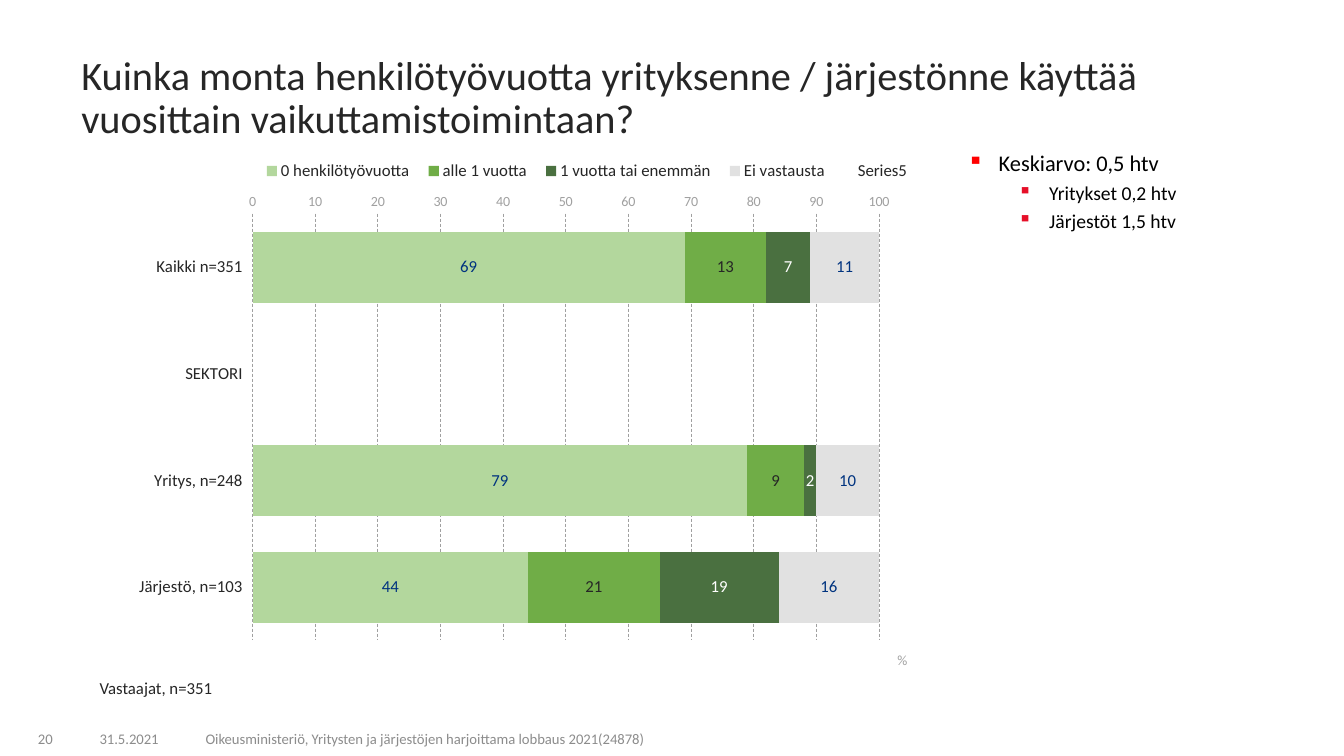
from lxml import etree
from pptx import Presentation
from pptx.chart.data import CategoryChartData
from pptx.dml.color import RGBColor
from pptx.enum.chart import (XL_AXIS_CROSSES, XL_CHART_TYPE, XL_LEGEND_POSITION,
                             XL_TICK_LABEL_POSITION, XL_TICK_MARK)
from pptx.enum.dml import MSO_LINE
from pptx.enum.text import MSO_ANCHOR, PP_ALIGN
from pptx.oxml.ns import qn
from pptx.util import Cm, Pt

LEFT, CENTER, RIGHT = PP_ALIGN.LEFT, PP_ALIGN.CENTER, PP_ALIGN.RIGHT
TOP, MIDDLE, BOTTOM = MSO_ANCHOR.TOP, MSO_ANCHOR.MIDDLE, MSO_ANCHOR.BOTTOM
NO_TICK = XL_TICK_MARK.NONE
FONT = "Calibri"
COLORS = {
    "ink": "262626", "black": "000000", "white": "FFFFFF", "navy": "00337F",
    "footer": "8C8C8C", "axis": "A0A0A0", "red": "FF0000", "crimson": "E60F28",
    "light green": "B3D79D", "green": "70AD47", "dark green": "4A7040", "grey": "E1E1E1",
}

# Content
TITLE = ("Kuinka monta henkilötyövuotta yrityksenne / järjestönne käyttää "
         "vuosittain vaikuttamistoimintaan?")
RESPONDENTS = "Vastaajat, n=351"
# text, left, width, alignment
FOOTERS = [
    ("20", 0.08, 1.5, RIGHT),
    ("31.5.2021", 1.68, 3.15, CENTER),
    ("Oikeusministeriö, Yritysten ja järjestöjen harjoittama lobbaus 2021(24878)",
     4.93, 15.04, LEFT),
]
# text, size, indent, space before, bullet colour
AVERAGES = [
    ("Keskiarvo: 0,5 htv", 16, 0.79, 0, "red"),
    ("Yritykset 0,2 htv", 14, 2.06, 5, "crimson"),
    ("Järjestöt 1,5 htv", 14, 2.06, 5, "crimson"),
]
GROUPS = ["Kaikki n=351", "SEKTORI", "Yritys, n=248", "Järjestö, n=103"]
# name, values, fill, label colour
ANSWERS = [
    ("0 henkilötyövuotta", [69, None, 79, 44], "light green", "navy"),
    ("alle 1 vuotta", [13, None, 9, 21], "green", "ink"),
    ("1 vuotta tai enemmän", [7, None, 2, 19], "dark green", "white"),
    ("Ei vastausta", [11, None, 10, 16], "grey", "navy"),
    ("Series5", [None] * 4, None, None),
]


def rgb(name):
    return RGBColor.from_string(COLORS[name])


def style(font, size, color):
    font.name, font.size, font.bold = FONT, Pt(size), False
    font.color.rgb = rgb(color)


def write(para, text, *, size=12, color="ink", align=LEFT, spacing=None, before=0):
    para.alignment = align
    para.line_spacing = spacing
    para.space_before = Pt(before)
    span = para.add_run()
    span.text = text
    style(span.font, size, color)


def add_box(page, left, top, width, height, anchor=TOP):
    frame = page.shapes.add_textbox(Cm(left), Cm(top), Cm(width), Cm(height)).text_frame
    frame.word_wrap = True
    frame.vertical_anchor = anchor
    return frame


def add_bullet(para, indent, color):
    props = para._p.get_or_add_pPr()
    props.set("marL", str(Cm(indent)))
    props.set("indent", str(-Cm(0.79)))
    tint = etree.SubElement(props, qn("a:buClr"))
    etree.SubElement(tint, qn("a:srgbClr")).set("val", COLORS[color])
    etree.SubElement(props, qn("a:buChar")).set("char", "▪")


def place(parent, after, inner=False, **fractions):
    """Set a manual layout, given as fractions of the chart."""
    for old in parent.findall(qn("c:layout")):
        parent.remove(old)
    layout = etree.Element(qn("c:layout"))
    manual = etree.SubElement(layout, qn("c:manualLayout"))
    if inner:
        etree.SubElement(manual, qn("c:layoutTarget")).set("val", "inner")
    for side in "xy":
        etree.SubElement(manual, qn(f"c:{side}Mode")).set("val", "edge")
    for key, value in fractions.items():
        etree.SubElement(manual, qn(f"c:{key}")).set("val", str(value))
    if after is None:
        parent.insert(0, layout)
    else:
        parent.find(qn(after)).addnext(layout)


def add_answer_chart(page):
    data = CategoryChartData()
    data.categories = GROUPS
    for name, values, *_ in ANSWERS:
        data.add_series(name, values)
    chart = page.shapes.add_chart(XL_CHART_TYPE.BAR_STACKED, Cm(1.8), Cm(3.71),
                                  Cm(21.84), Cm(13.31), data).chart
    style(chart.font, 12, "black")
    chart.has_title = False

    # Bars
    plot = chart.plots[0]
    plot.gap_width, plot.overlap = 50, 100
    plot.vary_by_categories = False
    for series, (_, _, fill, label) in zip(plot.series, ANSWERS):
        if fill is None:
            series.format.fill.background()
            continue
        series.format.fill.solid()
        series.format.fill.fore_color.rgb = rgb(fill)
        labels = series.data_labels
        labels.show_value = True
        labels.number_format, labels.number_format_is_linked = "#,##0", False
        style(labels.font, 12, label)

    # Axes
    groups, percent = chart.category_axis, chart.value_axis
    groups.reverse_order = True
    groups.crosses = XL_AXIS_CROSSES.MAXIMUM
    groups.tick_label_position = XL_TICK_LABEL_POSITION.LOW
    percent.minimum_scale, percent.maximum_scale, percent.major_unit = 0, 100.01, 10
    percent.tick_labels.number_format = "General"
    percent.tick_labels.number_format_is_linked = False
    for axis, size, color in ((groups, 12, "ink"), (percent, 10, "axis")):
        axis.major_tick_mark = axis.minor_tick_mark = NO_TICK
        axis.format.line.fill.background()
        style(axis.tick_labels.font, size, color)
    groups.has_major_gridlines = False
    percent.has_major_gridlines = True
    grid = percent.major_gridlines.format.line
    grid.color.rgb, grid.width, grid.dash_style = rgb("axis"), Pt(0.5), MSO_LINE.DASH
    write(percent.axis_title.text_frame.paragraphs[0], "%", size=10, color="axis")

    # Legend and layout
    chart.has_legend = True
    legend = chart.legend
    legend.position, legend.include_in_layout = XL_LEGEND_POSITION.TOP, False
    style(legend.font, 12, "ink")
    place(legend._element, "c:legendPos", x=0.21, y=0.02, w=0.77, h=0.05)
    place(percent.axis_title._element, "c:tx", x=0.95, y=0.95)
    place(chart._chartSpace.chart.plotArea, None, inner=True,
          x=0.209, y=0.126, w=0.723, h=0.808)


def main():
    deck = Presentation()
    deck.slide_width, deck.slide_height = Cm(33.87), Cm(19.05)
    page = deck.slides.add_slide(deck.slide_layouts[6])

    # Footer
    for text, left, width, align in FOOTERS:
        frame = add_box(page, left, 18.19, width, 0.76, BOTTOM)
        write(frame.paragraphs[0], text, size=10.5, color="footer", align=align)

    # Averages
    frame = add_box(page, 24.13, 3.71, 8.33, 14.15)
    for index, (text, size, indent, before, bullet) in enumerate(AVERAGES):
        para = frame.add_paragraph() if index else frame.paragraphs[0]
        write(para, text, size=size, color="black", spacing=0.9, before=before)
        add_bullet(para, indent, bullet)

    # Title, chart and respondents
    frame = add_box(page, 1.8, 1.63, 30.66, 1.73, MIDDLE)
    write(frame.paragraphs[0], TITLE, size=28.8, spacing=0.9)
    add_answer_chart(page)
    frame = add_box(page, 2.26, 17.02, 23.32, 0.71)
    write(frame.paragraphs[0], RESPONDENTS, spacing=0.9)

    deck.save("out.pptx")


if __name__ == "__main__":
    main()
